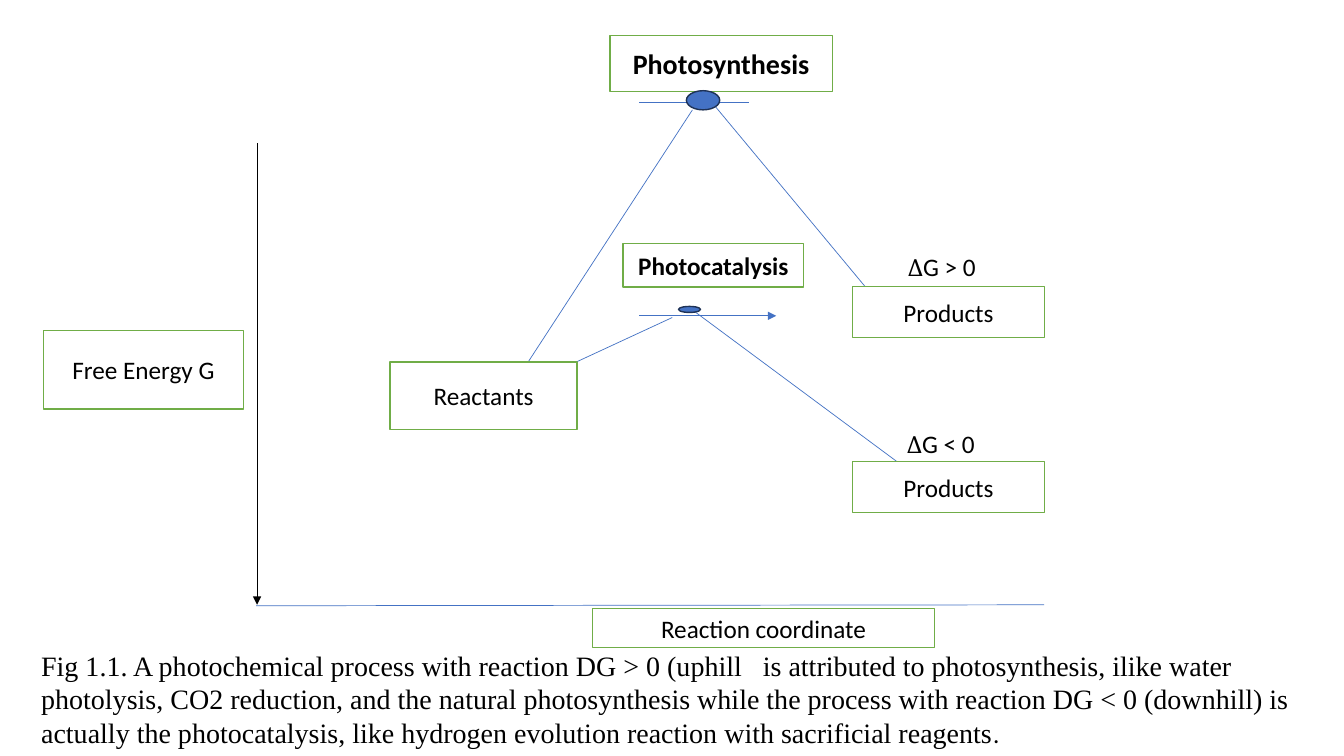
"""Build the free energy diagram comparing photosynthesis with photocatalysis."""
from dataclasses import dataclass

from lxml.etree import SubElement
from pptx import Presentation
from pptx.dml.color import RGBColor
from pptx.enum.shapes import MSO_CONNECTOR, MSO_SHAPE
from pptx.enum.text import MSO_ANCHOR, MSO_AUTO_SIZE, PP_ALIGN
from pptx.oxml.ns import qn
from pptx.shapes.autoshape import Shape
from pptx.slide import Slide
from pptx.text.text import TextFrame
from pptx.util import Pt

BLACK = RGBColor(0x00, 0x00, 0x00)
WHITE = RGBColor(0xFF, 0xFF, 0xFF)
BLUE = RGBColor(0x44, 0x72, 0xC4)
NAVY = RGBColor(0x1E, 0x32, 0x56)
GREEN = RGBColor(0x70, 0xAD, 0x47)

BODY = {"name": "Calibri", "size": Pt(18), "bold": False}
STRONG = BODY | {"bold": True}
HEADING = STRONG | {"size": Pt(20)}
SYMBOL = BODY | {"name": "Cambria"}
CAPTION = {"name": "Times New Roman", "size": Pt(20), "bold": False}

BOX_FRAME = {"word_wrap": True, "vertical_anchor": MSO_ANCHOR.MIDDLE}
TEXT_FRAME = {"word_wrap": True, "auto_size": MSO_AUTO_SIZE.SHAPE_TO_FIT_TEXT}


@dataclass(frozen=True)
class Area:
    left: float
    top: float
    width: float
    height: float

    def lengths(self) -> tuple[Pt, Pt, Pt, Pt]:
        return Pt(self.left), Pt(self.top), Pt(self.width), Pt(self.height)


@dataclass(frozen=True)
class Box:
    text: str
    area: Area
    font: dict


@dataclass(frozen=True)
class Line:
    start: tuple[float, float]
    end: tuple[float, float]
    color: RGBColor = BLUE
    arrow: bool = False


@dataclass(frozen=True)
class Note:
    area: Area
    spans: tuple[tuple[str, dict], ...]


LINES = [
    Line((183.6, 102.2), (183.6, 432), BLACK, arrow=True),
    Line((182.9, 432.7), (745.9, 432)),
    Line((456.5, 72.9), (535, 72.9)),
    Line((377.3, 258.5), (494.6, 78.5)),
    Line((508.3, 72.9), (617.8, 204.5)),
    Line((456.5, 225.6), (554.4, 225.6), arrow=True),
    Line((411.8, 258.5), (480.2, 226.8)),
    Line((496.1, 222.5), (640.8, 329.8)),
]

BOXES = [
    Box("Reactants", Area(278.6, 258.7, 133.7, 48), BODY),
    *(Box("Products", Area(609, 204.7 + 125 * row, 137, 36.5), BODY) for row in range(2)),
    Box("Reaction coordinate", Area(423.2, 434.7, 244.4, 28), BODY),
    Box("Free Energy G", Area(31, 236.2, 143, 56), BODY),
    Box("Photosynthesis", Area(435.6, 25.2, 159, 40), HEADING),
    Box("Photocatalysis", Area(445, 174, 129, 31), STRONG),
]

NOTES = [
    Note(Area(640.8, 302.4, 110, 29), (("∆", SYMBOL), ("G < 0", BODY))),
    Note(Area(641.5, 175.7, 110, 29), (("∆", SYMBOL), ("G > 0", BODY))),
    Note(
        Area(22.3, 459.4, 936, 80),
        (
            (
                "Fig 1.1. A photochemical process with reaction DG > 0 (uphill   is attributed "
                "to photosynthesis, ilike water photolysis, CO2 reduction, and the natural "
                "photosynthesis while the process with reaction DG < 0 (downhill) is actually "
                "the photocatalysis, like hydrogen evolution reaction with sacrificial reagents",
                CAPTION,
            ),
            (".", BODY),
        ),
    ),
]

PEAKS = [Area(484.6, 218.9, 15.8, 4.3), Area(490.3, 64.8, 23.8, 13.7)]


def apply_format(target: object, values: dict) -> None:
    for name, value in values.items():
        setattr(target, name, value)


def write_spans(frame: TextFrame, spans: tuple[tuple[str, dict], ...], align: PP_ALIGN) -> None:
    para = frame.paragraphs[0]
    para.alignment = align
    for text, font in spans:
        span = para.add_run()
        span.text = text
        apply_format(span.font, font)
        span.font.color.rgb = BLACK


def draw_shape(page: Slide, kind: MSO_SHAPE, area: Area, fill: RGBColor, outline: RGBColor) -> Shape:
    shape = page.shapes.add_shape(kind, *area.lengths())
    shape.shadow.inherit = False
    shape.fill.solid()
    shape.fill.fore_color.rgb = fill
    shape.line.color.rgb = outline
    shape.line.width = Pt(1)
    return shape


def draw_line(page: Slide, line: Line) -> None:
    ends = (Pt(length) for length in (*line.start, *line.end))
    connector = page.shapes.add_connector(MSO_CONNECTOR.STRAIGHT, *ends)
    connector.line.color.rgb = line.color
    connector.line.width = Pt(0.5)
    properties = connector.element.spPr
    if line.arrow:
        SubElement(properties.find(qn("a:ln")), qn("a:tailEnd"), type="triangle")
    SubElement(properties, qn("a:effectLst"))


def draw_box(page: Slide, box: Box) -> None:
    frame = draw_shape(page, MSO_SHAPE.RECTANGLE, box.area, WHITE, GREEN).text_frame
    apply_format(frame, BOX_FRAME)
    write_spans(frame, ((box.text, box.font),), PP_ALIGN.CENTER)


def draw_note(page: Slide, note: Note) -> None:
    frame = page.shapes.add_textbox(*note.area.lengths()).text_frame
    apply_format(frame, TEXT_FRAME)
    write_spans(frame, note.spans, PP_ALIGN.LEFT)


def main() -> None:
    deck = Presentation()
    apply_format(deck, {"slide_width": Pt(960), "slide_height": Pt(540)})
    page = deck.slides.add_slide(deck.slide_layouts.get_by_name("Blank"))
    for line in LINES:
        draw_line(page, line)
    for box in BOXES:
        draw_box(page, box)
    for note in NOTES:
        draw_note(page, note)
    for peak in PEAKS:
        draw_shape(page, MSO_SHAPE.OVAL, peak, BLUE, NAVY)
    deck.save("out.pptx")


if __name__ == "__main__":
    main()
